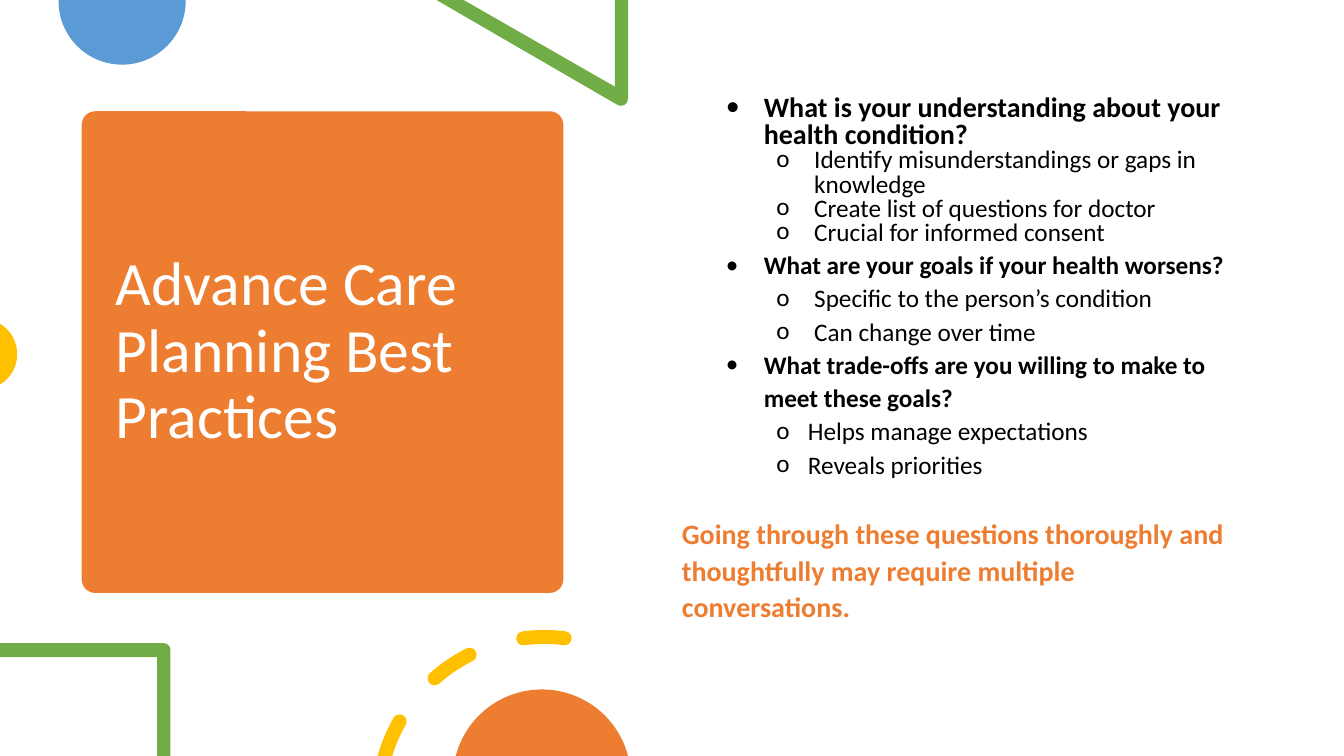
"""Build the slide on best practices in advance care planning."""
from math import asin, ceil, cos, degrees, radians, sin, tan

from lxml import etree
from pptx import Presentation
from pptx.dml.color import RGBColor
from pptx.enum.shapes import MSO_SHAPE
from pptx.enum.text import MSO_ANCHOR, PP_ALIGN
from pptx.oxml.ns import qn
from pptx.util import Pt

ROUNDED = MSO_SHAPE.ROUNDED_RECTANGLE
TOP, MIDDLE = MSO_ANCHOR.TOP, MSO_ANCHOR.MIDDLE
LEFT = PP_ALIGN.LEFT
TITLE_ONLY = 5
SLIDE_WIDTH, SLIDE_HEIGHT = 960, 540
FONT = "Calibri"
COLORS = {"orange": "ED7D31", "blue": "5B9BD5", "green": "70AD47",
          "yellow": "FFC000", "black": "000000", "white": "FFFFFF"}

QUESTION = {"level": 1, "margin": 58.5, "indent": -27, "bullet": "•", "bold": True}
ANSWER = {"level": 2, "margin": 94.5, "indent": -27, "bullet": "o", "bold": False}
NEAR_ANSWER = {**ANSWER, "margin": 90, "indent": -22.5}
CLOSING = {"level": 0, "bold": True, "size": 20, "color": "orange", "before": 24}
TIGHT = {"spacing": 0.8}
BODY = [
    ("What is your understanding about your health condition?",
     {**QUESTION, **TIGHT, "size": 20}),
    ("Identify misunderstandings or gaps in knowledge", {**ANSWER, **TIGHT}),
    ("Create list of questions for doctor", {**ANSWER, **TIGHT}),
    ("Crucial for informed consent", {**ANSWER, **TIGHT}),
    ("What are your goals if your health worsens?", QUESTION),
    ("Specific to the person’s condition", ANSWER),
    ("Can change over time", ANSWER),
    ("What trade-offs are you willing to make to meet these goals?", QUESTION),
    ("Helps manage expectations", NEAR_ANSWER),
    ("Reveals priorities", NEAR_ANSWER),
    ("Going through these questions thoroughly and thoughtfully may require "
     "multiple conversations.", CLOSING),
]


def set_attributes(target, values):
    """Set each named attribute of the target."""
    for name, value in values.items():
        setattr(target, name, value)


def place(shape, left, top, width, height):
    """Give a shape its position and size in points."""
    set_attributes(shape, {"left": Pt(left), "top": Pt(top),
                           "width": Pt(width), "height": Pt(height)})


def paint(shape, color):
    """Fill a shape with one colour, without line or shadow."""
    shape.shadow.inherit = False
    shape.fill.solid()
    shape.fill.fore_color.rgb = RGBColor.from_string(COLORS[color])
    shape.line.fill.background()


def arc(center_x, center_y, radius, start, end):
    """Return a start point and Bezier curves, three points each, along a circle."""
    count = ceil(abs(end - start) / 90)
    turn = radians(end - start) / count
    handle = 4 / 3 * tan(turn / 4)

    def spot(angle, pull=0):
        """Return the point at an angle, moved along the tangent."""
        return (center_x + radius * (cos(angle) - pull * sin(angle)),
                center_y + radius * (sin(angle) + pull * cos(angle)))

    angles = [radians(start) + turn * step for step in range(count + 1)]
    return [spot(angles[0])] + [
        (spot(before, handle), spot(after, -handle), spot(after))
        for before, after in zip(angles, angles[1:])]


def add_outline(slide, color, *contours):
    """Draw closed contours of points and curves as one filled freeform."""
    builder, curve_starts, line_count = None, [], 0
    for contour in contours:
        points = []
        for item in contour:
            if len(item) == 3:
                curve_starts.append(line_count + len(points) - 1)
                points.extend(item)
            else:
                points.append(item)
        line_count += len(points) - 1
        points = [(Pt(x), Pt(y)) for x, y in points]
        if builder is None:
            builder = slide.shapes.build_freeform(*points[0], scale=1.0)
        else:
            builder.move_to(*points[0])
        builder.add_line_segments(points[1:], close=False)
        builder.add_line_segments([], close=True)
    shape = builder.convert_to_shape()
    lines = list(shape._element.iter(qn("a:lnTo")))
    for start in curve_starts:
        first, second, third = lines[start:start + 3]
        curve = etree.Element(qn("a:cubicBezTo"))
        first.addprevious(curve)
        for line in (first, second, third):
            curve.append(line[0])
            line.getparent().remove(line)
    paint(shape, color)


def ring_dash(start, end):
    """Return a round-ended dash of the ring; without a start it is cut by the slide edge."""
    x, y, radius, half = 388.8, 573.8, 118.8, 5
    outer, inner = radius + half, radius - half

    def cut(edge_radius):
        """Return the angle at which a circle meets the slide's lower edge."""
        return 180 + degrees(asin((y - SLIDE_HEIGHT) / edge_radius))

    def cap(angle, turn):
        """Return the half circle that rounds one end."""
        center_x = x + radius * cos(radians(angle))
        center_y = y + radius * sin(radians(angle))
        return arc(center_x, center_y, half, angle + turn, angle + turn + 180)[1:]

    first_outer, first_inner = (cut(outer), cut(inner)) if start is None else (start, start)
    dash = (arc(x, y, outer, first_outer, end) + cap(end, 0)
            + arc(x, y, inner, end, first_inner)[1:])
    return dash if start is None else dash + cap(start, 180)


def format_font(font, size, color, bold=False):
    """Set the font, size, weight and colour of text."""
    set_attributes(font, {"name": FONT, "size": Pt(size), "bold": bold})
    font.color.rgb = RGBColor.from_string(COLORS[color])


def format_paragraph(paragraph, style):
    """Set the level, spacing, indents and bullet of a paragraph."""
    set_attributes(paragraph, {"alignment": LEFT, "level": style["level"],
                               "line_spacing": style.get("spacing", 1.1),
                               "space_before": Pt(style.get("before", 0)),
                               "space_after": Pt(0)})
    properties = paragraph._p.get_or_add_pPr()
    properties.set("marL", str(Pt(style.get("margin", 0))))
    properties.set("indent", str(Pt(style.get("indent", 0))))
    if "bullet" in style:
        etree.SubElement(properties, qn("a:buFont")).set("typeface", FONT)
        etree.SubElement(properties, qn("a:buChar")).set("char", style["bullet"])


def add_title(slide):
    """Draw the orange card and set the title on it."""
    card = slide.shapes.add_shape(ROUNDED, Pt(58.4), Pt(79.5), Pt(344), Pt(344))
    card.adjustments[0] = 0.028
    paint(card, "orange")
    title = slide.shapes.title
    card._element.addnext(title._element)
    place(title, 75.6, 87.4, 310.3, 328.3)
    frame = title.text_frame
    set_attributes(frame, {"text": "Advance Care Planning Best Practices",
                           "vertical_anchor": MIDDLE, "word_wrap": True})
    paragraph = frame.paragraphs[0]
    set_attributes(paragraph, {"alignment": LEFT, "line_spacing": 0.9})
    format_font(paragraph.runs[0].font, 44, "white")


def add_body(slide):
    """Write the questions and the closing sentence."""
    box = slide.shapes.add_textbox(Pt(480), Pt(64.8), Pt(414), Pt(385.2))
    frame = box.text_frame
    set_attributes(frame, {"word_wrap": True, "vertical_anchor": TOP})
    for index, (text, style) in enumerate(BODY):
        paragraph = frame.add_paragraph() if index else frame.paragraphs[0]
        format_paragraph(paragraph, style)
        run = paragraph.add_run()
        run.text = text
        format_font(run.font, style.get("size", 18), style.get("color", "black"),
                    style["bold"])


def main():
    """Build and save the presentation."""
    presentation = Presentation()
    set_attributes(presentation, {"slide_width": Pt(SLIDE_WIDTH),
                                  "slide_height": Pt(SLIDE_HEIGHT)})
    slide = presentation.slides.add_slide(presentation.slide_layouts[TITLE_ONLY])
    add_title(slide)
    add_outline(slide, "blue", [(41.8, 0), *arc(87.2, 0.8, 45.4, 180, 0), (132.6, 0)])
    add_outline(slide, "green",
                [(448.6, 0), (439.2, 0), (439.2, 61.9), (331.2, 0), (311.8, 0),
                 *arc(443.6, 70.6, 5, 120, 0)])
    add_outline(slide, "yellow", arc(-13, 253, 25.3, -59, 59))
    add_body(slide)
    add_outline(slide, "green",
                [(0, 459.4), *arc(117, 464.1, 4.7, -90, 0), (121.7, SLIDE_HEIGHT),
                 (112.3, SLIDE_HEIGHT), (112.3, 469.4), (0, 469.4)])
    add_outline(slide, "yellow", ring_dash(None, 209.5), ring_dash(228.7, 243.3),
                ring_dash(262.7, 277))
    add_outline(slide, "orange", arc(387.1, 556.1, 63.6, 194.7, 345.3))
    presentation.save("out.pptx")


if __name__ == "__main__":
    main()
